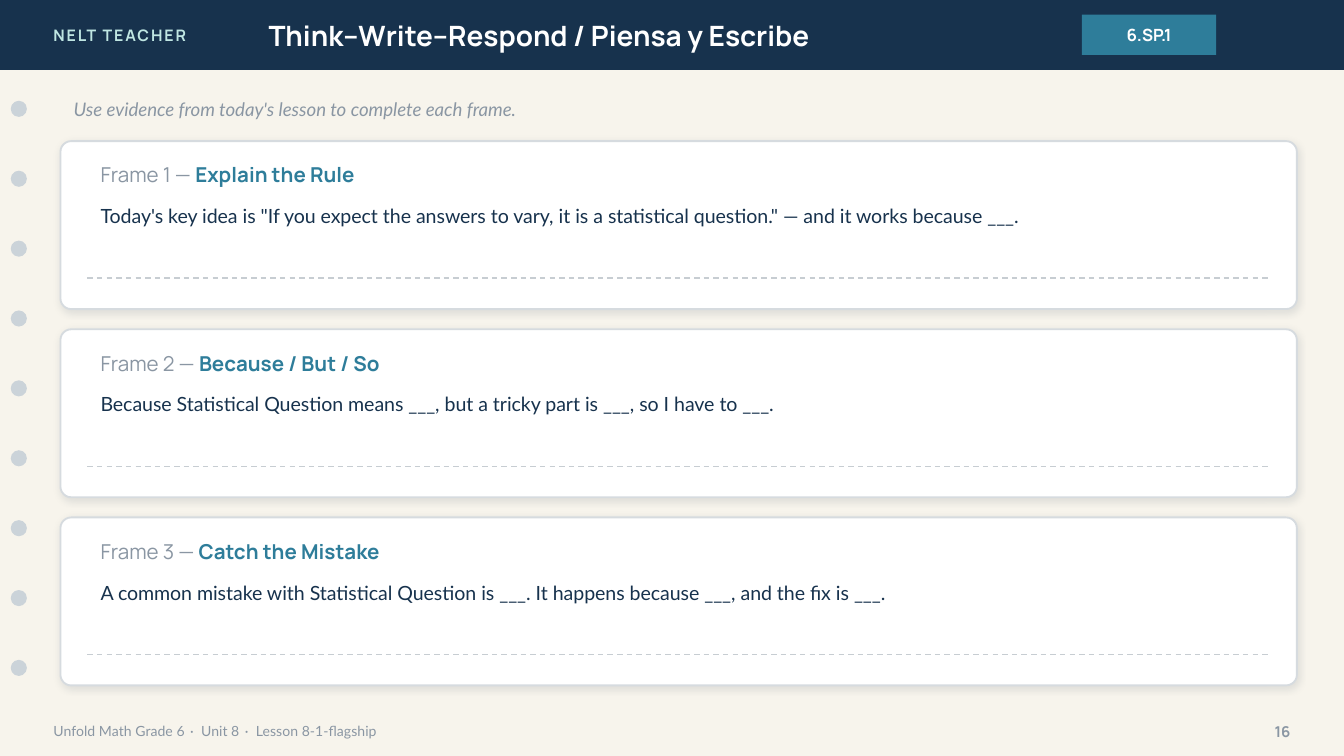
from dataclasses import dataclass
from typing import NamedTuple

from lxml.etree import SubElement
from pptx import Presentation
from pptx.dml.color import RGBColor
from pptx.enum.dml import MSO_LINE
from pptx.enum.shapes import MSO_CONNECTOR, MSO_SHAPE
from pptx.enum.text import MSO_ANCHOR, PP_ALIGN
from pptx.oxml.ns import qn
from pptx.shapes.autoshape import Shape
from pptx.slide import Slide
from pptx.util import Emu, Pt

PX = 914400 // 200  # 200 px to the inch


@dataclass(frozen=True)
class Theme:
    paper: str = "F7F4EC"
    navy: str = "17324D"
    teal: str = "2E7D9A"
    mint: str = "BFE6E2"
    white: str = "FFFFFF"
    grey: str = "8A96A3"
    hole: str = "CBD3D9"
    border: str = "D6DBDF"
    rule: str = "C7CDD2"
    shadow: str = "1C2E42"
    heading: str = "Manrope"
    body: str = "Lato"
    brand_size: float = 8.5
    title_size: float = 15
    badge_size: float = 9
    hint_size: float = 10
    label_size: float = 11
    prompt_size: float = 10.5
    footer_size: float = 7.5
    number_size: float = 8


THEME = Theme()


class Box(NamedTuple):
    left: int
    top: int
    width: int
    height: int

    def emu(self) -> list[Emu]:
        return [Emu(value * PX) for value in self]


class Span(NamedTuple):
    text: str
    size: float
    color: str
    name: str = THEME.body
    bold: bool = False
    italic: bool = False
    spacing: float = 0  # points between letters


class Frame(NamedTuple):
    number: int
    title: str
    prompt: str


FRAMES = [
    Frame(1, "Explain the Rule",
          "Today's key idea is \"If you expect the answers to vary, it is a "
          "statistical question.\" — and it works because ___."),
    Frame(2, "Because / But / So",
          "Because Statistical Question means ___, but a tricky part is ___, "
          "so I have to ___."),
    Frame(3, "Catch the Mistake",
          "A common mistake with Statistical Question is ___. It happens "
          "because ___, and the fix is ___."),
]
FOOTER_PARTS = ["Unfold Math Grade 6", "Unit 8", "Lesson 8-1-flagship"]
FIRST_FRAME_TOP, FRAME_STEP = 210, 280
HOLE_COUNT, FIRST_HOLE_TOP, HOLE_STEP = 9, 150, 104


def write(shape: Shape, spans: list[Span], align: PP_ALIGN = PP_ALIGN.LEFT,
          anchor: MSO_ANCHOR = MSO_ANCHOR.MIDDLE) -> None:
    text_frame = shape.text_frame
    text_frame.word_wrap = True
    text_frame.vertical_anchor = anchor
    paragraph = text_frame.paragraphs[0]
    paragraph.alignment = align
    for span in spans:
        run = paragraph.add_run()
        run.text = span.text
        formats = {"size": Pt(span.size), "name": span.name,
                   "bold": span.bold, "italic": span.italic}
        for attribute, value in formats.items():
            setattr(run.font, attribute, value)
        run.font.color.rgb = RGBColor.from_string(span.color)
        if span.spacing:
            run.font._element.set("spc", str(round(span.spacing * 100)))


def add_text(slide: Slide, box: Box, spans: list[Span],
             align: PP_ALIGN = PP_ALIGN.LEFT,
             anchor: MSO_ANCHOR = MSO_ANCHOR.MIDDLE) -> None:
    write(slide.shapes.add_textbox(*box.emu()), spans, align, anchor)


def add_block(slide: Slide, kind: MSO_SHAPE, box: Box, color: str) -> Shape:
    shape = slide.shapes.add_shape(kind, *box.emu())
    shape.shadow.inherit = False
    shape.fill.solid()
    shape.fill.fore_color.rgb = RGBColor.from_string(color)
    shape.line.fill.background()
    return shape


def add_soft_shadow(shape: Shape) -> None:
    effects = shape._element.spPr.find(qn("a:effectLst"))
    shadow = SubElement(effects, qn("a:outerShdw"), blurRad=str(Pt(4)),
                        dist=str(Pt(1)), dir="5400000", rotWithShape="0")
    color = SubElement(shadow, qn("a:srgbClr"), val=THEME.shadow)
    SubElement(color, qn("a:alpha"), val="10000")


def add_writing_line(slide: Slide, left: int, right: int, top: int) -> None:
    connector = slide.shapes.add_connector(
        MSO_CONNECTOR.STRAIGHT, *(Emu(value * PX) for value in (left, top, right, top)))
    connector.line.color.rgb = RGBColor.from_string(THEME.rule)
    for attribute, value in {"width": Pt(0.75), "dash_style": MSO_LINE.DASH}.items():
        setattr(connector.line, attribute, value)
    SubElement(connector._element.spPr, qn("a:effectLst"))


def add_frame(slide: Slide, frame: Frame, top: int) -> None:
    card = add_block(slide, MSO_SHAPE.ROUNDED_RECTANGLE, Box(90, top, 1840, 250), THEME.white)
    card.adjustments[0] = 0.064
    card.line.color.rgb = RGBColor.from_string(THEME.border)
    card.line.width = Pt(1)
    add_soft_shadow(card)
    add_text(slide, Box(130, top + 20, 1760, 60), [
        Span(f"Frame {frame.number} — ", THEME.label_size, THEME.grey, THEME.heading),
        Span(frame.title, THEME.label_size, THEME.teal, THEME.heading, bold=True)])
    add_text(slide, Box(130, top + 84, 1760, 80),
             [Span(frame.prompt, THEME.prompt_size, THEME.navy)], anchor=MSO_ANCHOR.TOP)
    add_writing_line(slide, 130, 1890, top + 204)


def add_header(slide: Slide) -> None:
    add_block(slide, MSO_SHAPE.RECTANGLE, Box(0, 0, 2000, 104), THEME.navy)
    add_text(slide, Box(60, 0, 480, 104), [
        Span("NELT TEACHER", THEME.brand_size, THEME.mint, THEME.heading, bold=True, spacing=1)])
    add_text(slide, Box(380, 0, 1120, 104), [
        Span("Think–Write–Respond / Piensa y Escribe", THEME.title_size, THEME.white,
             THEME.heading, bold=True)])
    badge = add_block(slide, MSO_SHAPE.RECTANGLE, Box(1610, 22, 200, 60), THEME.teal)
    write(badge, [Span("6.SP.1", THEME.badge_size, THEME.white, THEME.heading, bold=True)],
          PP_ALIGN.CENTER)


def add_footer(slide: Slide) -> None:
    spans = []
    for part in FOOTER_PARTS:
        if spans:
            spans.append(Span(" · ", THEME.footer_size, THEME.grey, spacing=1))
        spans.append(Span(part, THEME.footer_size, THEME.grey))
    add_text(slide, Box(60, 1060, 1400, 56), spans)
    add_text(slide, Box(1840, 1060, 100, 56),
             [Span("16", THEME.number_size, THEME.grey, THEME.heading, bold=True)],
             PP_ALIGN.RIGHT)


def main() -> None:
    presentation = Presentation()
    presentation.slide_width, presentation.slide_height = Emu(2000 * PX), Emu(1125 * PX)
    slide = presentation.slides.add_slide(presentation.slide_layouts[6])
    slide.background.fill.solid()
    slide.background.fill.fore_color.rgb = RGBColor.from_string(THEME.paper)

    add_header(slide)

    # Binder holes down the left edge
    for index in range(HOLE_COUNT):
        hole = Box(16, FIRST_HOLE_TOP + index * HOLE_STEP, 24, 24)
        add_block(slide, MSO_SHAPE.OVAL, hole, THEME.hole)

    add_footer(slide)

    # Instruction and the sentence frames
    add_text(slide, Box(90, 132, 1840, 60), [
        Span("Use evidence from today's lesson to complete each frame.",
             THEME.hint_size, THEME.grey, italic=True)])
    for index, frame in enumerate(FRAMES):
        add_frame(slide, frame, FIRST_FRAME_TOP + index * FRAME_STEP)

    presentation.save("out.pptx")


if __name__ == "__main__":
    main()
